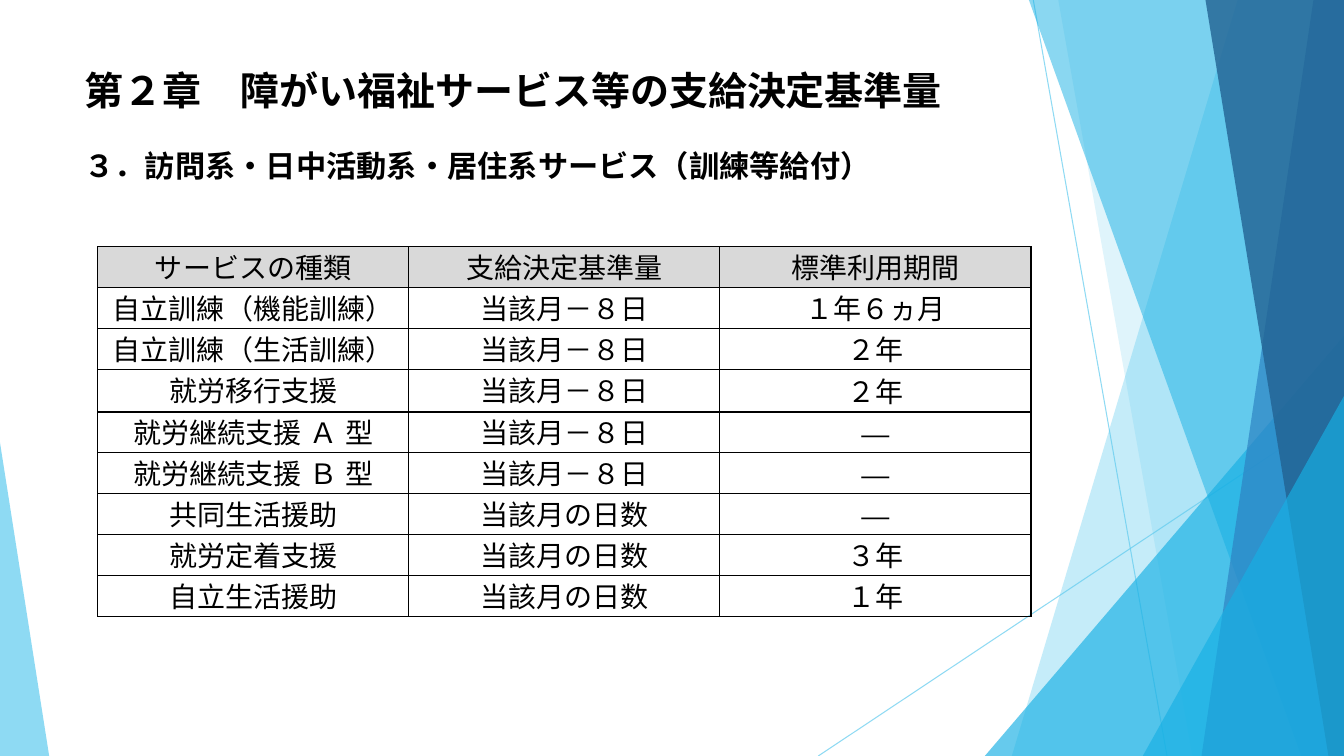
from lxml.etree import SubElement as Sub
from pptx import Presentation as Deck
from pptx.dml.color import RGBColor as Rgb
from pptx.enum.shapes import MSO_CONNECTOR as Conn, MSO_SHAPE as Kind
from pptx.enum.text import MSO_ANCHOR as Anchor, PP_ALIGN as Align
from pptx.oxml.ns import qn
from pptx.util import Cm, Pt

WIDE, HIGH = 33.87, 19.05
SANS, SERIF = "Noto Sans CJK JP", "TeX Gyre Schola"
SKY, CYAN, BLUE, NAVY = "5FCBEF", "17B0E4", "2E83C3", "226292"

# Slanted panels: top left x, bottom left x, colour, opacity in percent
BACK = [(31.19, 25.5, SKY, 36), (26.67, 30.05, SKY, 20)]
FRONT = [(25.93, 32.79, CYAN, 50), (33.1, 30.28, BLUE, 70),
         (30.38, 33.48, NAVY, 80)]

HEAD = ["サービスの種類", "支給決定基準量", "標準利用期間"]
LESS, FULL = "当該月－８日", "当該月の日数"
ROWS = [
    HEAD,
    ["自立訓練（機能訓練）", LESS, "１年６ヵ月"],
    ["自立訓練（生活訓練）", LESS, "２年"],
    ["就労移行支援", LESS, "２年"],
    ["就労継続支援 Ａ 型", LESS, "―"],
    ["就労継続支援 Ｂ 型", LESS, "―"],
    ["共同生活援助", FULL, "―"],
    ["就労定着支援", FULL, "３年"],
    ["自立生活援助", FULL, "１年"],
]


def tint(fmt, color, alpha=100):
    """Give a fill a solid colour with an opacity in percent."""
    fmt.solid()
    fmt.fore_color.rgb = Rgb.from_string(color)
    if alpha < 100:
        for node in fmt._xPr.iter(qn("a:srgbClr")):
            Sub(node, qn("a:alpha"), val=str(alpha * 1000))


def paint(shape, color, alpha):
    shape.shadow.inherit = False
    shape.line.fill.background()
    tint(shape.fill, color, alpha)


def ray(slide, x1, y1, x2, y2):
    line = slide.shapes.add_connector(
        Conn.STRAIGHT, Cm(x1), Cm(y1), Cm(x2), Cm(y2))
    line.line.width = Pt(0.75)
    tint(line.line.fill, SKY, 70)
    Sub(line._element.spPr, qn("a:effectLst"))


def panel(slide, top, foot, color, alpha):
    """Fill the slide from a slanted edge to its right side."""
    form = slide.shapes.build_freeform(Cm(top), 0)
    form.add_line_segments([(Cm(WIDE), 0), (Cm(WIDE), Cm(HIGH)),
                            (Cm(foot), Cm(HIGH))])
    paint(form.convert_to_shape(), color, alpha)


def wedge(slide, left, top, right, peak, color, alpha):
    """Stand a right triangle on the bottom edge."""
    shape = slide.shapes.add_shape(
        Kind.ISOSCELES_TRIANGLE, Cm(left), Cm(top),
        Cm(right - left), Cm(HIGH - top))
    shape.adjustments[0] = peak
    paint(shape, color, alpha)


def write(para, text, size, face, bold=False):
    run = para.add_run()
    run.text = text
    font = run.font
    font.size, font.name, font.bold = Pt(size), face, bold
    tint(font.fill, "000000")
    Sub(font._element, qn("a:ea"), typeface=face)


def title(slide):
    box = slide.shapes.add_textbox(Cm(1.88), Cm(1.55), Cm(23.88), Cm(3.66))
    frame = box.text_frame
    frame.word_wrap = True
    write(frame.paragraphs[0], "第２章　障がい福祉サービス等の支給決定基準量",
          27.9, SANS, True)
    para = frame.add_paragraph()
    para.space_before = Pt(24)
    write(para, "３．訪問系・日中活動系・居住系サービス（訓練等給付）",
          21.6, SERIF, True)


def border(cell):
    props = cell._tc.get_or_add_tcPr()
    for spot, side in enumerate(("a:lnL", "a:lnR", "a:lnT", "a:lnB")):
        edge = props.makeelement(qn(side), {"w": str(Pt(1))})
        props.insert(spot, edge)
        fill = Sub(edge, qn("a:solidFill"))
        Sub(fill, qn("a:srgbClr"), val="000000")


def grid(slide):
    table = slide.shapes.add_table(
        len(ROWS), len(HEAD), Cm(2.46), Cm(6.22), Cm(23.52), Cm(9.31)).table
    table.first_row = table.horz_banding = False
    for col in table.columns:
        col.width = Cm(7.84)
    for r, texts in enumerate(ROWS):
        table.rows[r].height = Cm(1.07 if r == 3 else 1.03)
        for c, text in enumerate(texts):
            cell = table.cell(r, c)
            cell.margin_left = cell.margin_right = Cm(0.18)
            cell.margin_top = cell.margin_bottom = 0
            if r == 0:
                tint(cell.fill, "D9D9D9")
            else:
                cell.fill.background()
                if c == 2:
                    cell.vertical_anchor = Anchor.MIDDLE
            border(cell)
            para = cell.text_frame.paragraphs[0]
            para.alignment = Align.CENTER
            write(para, text, 20, SERIF)


def main():
    deck = Deck()
    deck.slide_width, deck.slide_height = Cm(WIDE), Cm(HIGH)
    slide = deck.slides.add_slide(deck.slide_layouts[6])

    # Backdrop, from back to front
    ray(slide, 26.04, 0, 29.41, HIGH)
    ray(slide, WIDE, 10.24, 20.62, HIGH)
    for args in BACK:
        panel(slide, *args)
    wedge(slide, 24.82, 8.46, WIDE, 1, CYAN, 66)
    for args in FRONT:
        panel(slide, *args)
    wedge(slide, 28.8, 9.98, WIDE, 1, CYAN, 66)
    wedge(slide, 0, 11.15, 1.24, 0, SKY, 70)

    # Content
    title(slide)
    grid(slide)
    deck.save("out.pptx")


if __name__ == "__main__":
    main()
